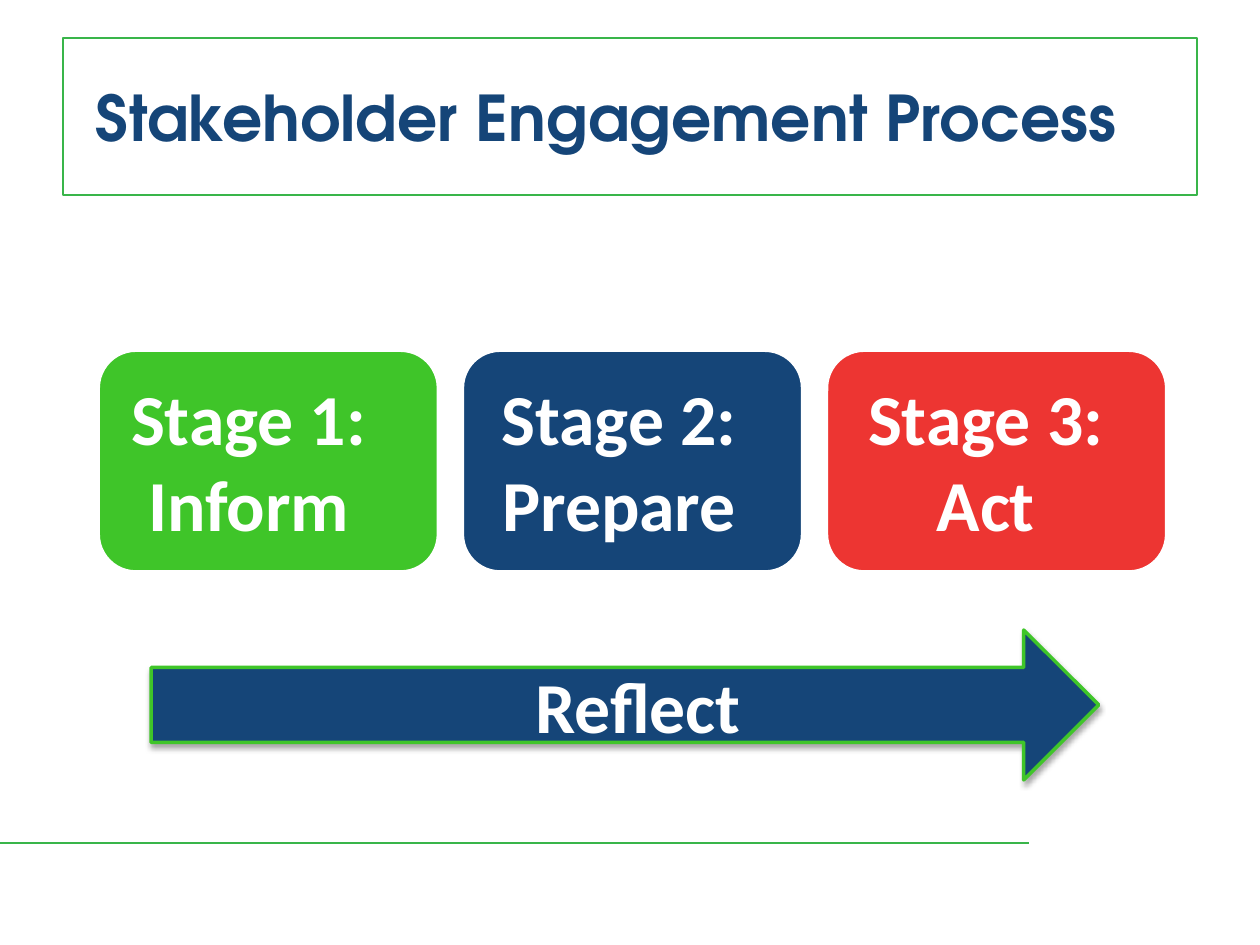
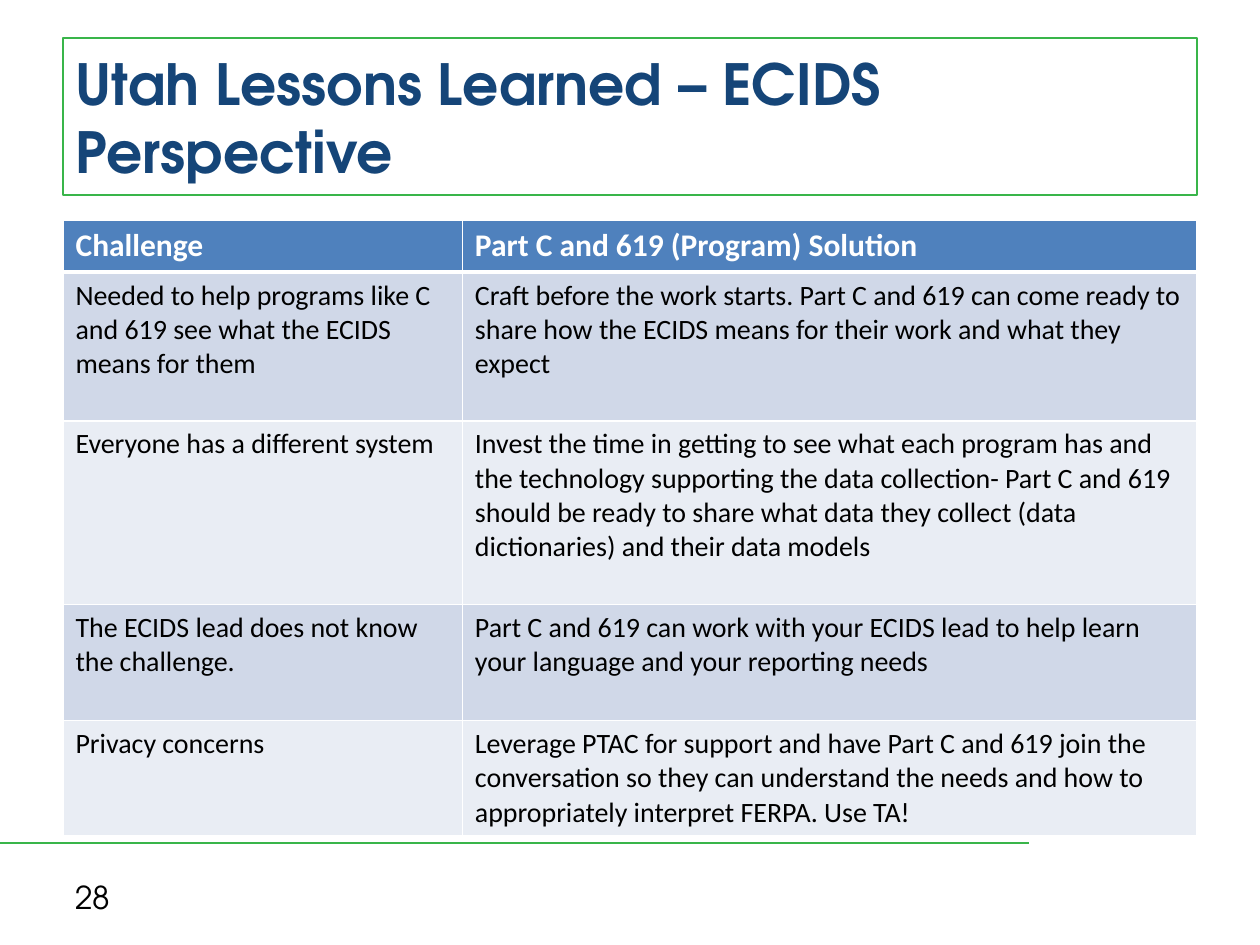
from pptx import Presentation
from pptx.dml.color import RGBColor
from pptx.enum.shapes import MSO_CONNECTOR, MSO_SHAPE
from pptx.enum.text import MSO_ANCHOR, MSO_AUTO_SIZE, PP_ALIGN
from pptx.oxml import parse_xml
from pptx.oxml.ns import nsdecls
from pptx.util import Inches, Pt

BLUE = RGBColor(0x15, 0x45, 0x78)
GREEN = RGBColor(0x3F, 0xC5, 0x29)
RED = RGBColor(0xED, 0x35, 0x32)
RULE = RGBColor(0x39, 0xB5, 0x4A)
HEAD = RGBColor(0x4F, 0x81, 0xBD)
BANDS = RGBColor(0xD0, 0xD8, 0xE8), RGBColor(0xE9, 0xED, 0xF4)
WHITE = RGBColor(0xFF, 0xFF, 0xFF)
BLACK = RGBColor(0, 0, 0)
BODY = "Calibri"
DISPLAY = "TeX Gyre Adventor"

STAGES = [
    ("Stage 1:", "Inform", GREEN, 0.99),
    ("Stage 2:", "Prepare", BLUE, 3.93),
    ("Stage 3:", "Act", RED, 6.84),
]
LESSONS = [
    ("Challenge", "Part C and 619 (Program) Solution"),
    ("Needed to help programs like C and 619 see what the ECIDS means for them",
     "Craft before the work starts. Part C and 619 can come ready to share how "
     "the ECIDS means for their work and what they expect"),
    ("Everyone has a different system",
     "Invest the time in getting to see what each program has and the technology "
     "supporting the data collection- Part C and 619 should be ready to share "
     "what data they collect (data dictionaries) and their data models"),
    ("The ECIDS lead does not know the challenge.",
     "Part C and 619 can work with your ECIDS lead to help learn your language "
     "and your reporting needs"),
    ("Privacy concerns",
     "Leverage PTAC for support and have Part C and 619 join the conversation so "
     "they can understand the needs and how to appropriately interpret FERPA. "
     "Use TA!"),
]


class Deck:
    def __init__(self):
        self.prs = Presentation()
        self.prs.slide_width, self.prs.slide_height = Inches(10), Inches(7.5)
        self.slide = None

    def start(self, title, size, inset=0.1, indent=0):
        """Begin a slide with the framed title and the bottom rule."""
        self.slide = self.prs.slides.add_slide(self.prs.slide_layouts[5])
        rule = self.slide.shapes.add_connector(
            MSO_CONNECTOR.STRAIGHT, 0, Inches(6.69), Inches(8.17), Inches(6.69))
        rule.line.color.rgb, rule.line.width = RULE, Pt(1.5)
        self.effect(rule)
        head = self.slide.shapes.title
        self.place(head, 0.5, 0.3, 9, 1.25)
        head.line.color.rgb, head.line.width = RULE, Pt(1)
        frame = self.letter(head, [title], size, BLUE, DISPLAY, inset=inset)
        frame.auto_size = MSO_AUTO_SIZE.NONE
        frame.paragraphs[0].alignment = PP_ALIGN.LEFT
        self.indent(frame.paragraphs[0], indent)

    def place(self, shape, left, top, width, height):
        shape.left, shape.top = Inches(left), Inches(top)
        shape.width, shape.height = Inches(width), Inches(height)

    def effect(self, shape, inner=""):
        """Replace the theme's shadow with the given effects."""
        shape._element.spPr.append(parse_xml(
            f"<a:effectLst {nsdecls('a')}>{inner}</a:effectLst>"))

    def indent(self, para, width):
        props = para._p.get_or_add_pPr()
        props.set("marL", "0")
        props.set("indent", str(Inches(width)))

    def font(self, para, size, color, name, bold):
        para.font.size, para.font.name = Pt(size), name
        para.font.bold, para.font.color.rgb = bold, color

    def letter(self, shape, lines, size, color, name=BODY, bold=True,
               inset=0.1, anchor=MSO_ANCHOR.MIDDLE):
        """Fill a shape with styled lines and return its text frame."""
        frame = shape.text_frame
        frame.text = "\n".join(lines)
        frame.word_wrap = True
        frame.vertical_anchor = anchor
        frame.margin_left = frame.margin_right = Inches(inset)
        frame.margin_top = frame.margin_bottom = Inches(min(inset, 0.05))
        for para in frame.paragraphs:
            self.font(para, size, color, name, bold)
        return frame

    def text(self, box, lines, size, color, **style):
        shape = self.slide.shapes.add_textbox(*map(Inches, box))
        return self.letter(shape, lines, size, color, **style)

    def shape(self, kind, box, fill, line):
        shape = self.slide.shapes.add_shape(kind, *map(Inches, box))
        shape.fill.solid()
        shape.fill.fore_color.rgb = fill
        shape.line.color.rgb, shape.line.width = line, Pt(2)
        return shape

    def stage(self, left, name, verb, fill, label):
        card = self.shape(MSO_SHAPE.ROUNDED_RECTANGLE, (left, 2.78, 2.7, 1.76), fill, WHITE)
        card.adjustments[0] = 0.17
        card.shadow.inherit = False
        frame = self.text((label, 2.92, 2.43, 1.41), [name, verb], 41, WHITE,
                          inset=0.05, anchor=MSO_ANCHOR.TOP)
        frame.word_wrap = False
        frame.auto_size = MSO_AUTO_SIZE.SHAPE_TO_FIT_TEXT
        frame.paragraphs[1].alignment = PP_ALIGN.CENTER

    def arrow(self, label):
        arrow = self.shape(MSO_SHAPE.RIGHT_ARROW, (1.2, 5, 7.52, 1.19), BLUE, GREEN)
        self.effect(arrow, f'<a:outerShdw blurRad="{Pt(3)}" dist="{Pt(1.8)}" dir="5400000" '
                           'rotWithShape="0"><a:srgbClr val="000000">'
                           '<a:alpha val="35000"/></a:srgbClr></a:outerShdw>')
        frame = self.text((1.2, 5.22, 7.23, 0.75), [label], 41, WHITE, inset=0)
        frame.paragraphs[0].alignment = PP_ALIGN.CENTER
        self.indent(frame.paragraphs[0], 0.5)

    def edge(self, cell, **widths):
        """Draw white cell borders; widths are points by side."""
        props = cell._tc.get_or_add_tcPr()
        for side, width in widths.items():
            props.append(parse_xml(
                f'<a:ln{side} {nsdecls("a")} w="{Pt(width)}"><a:solidFill>'
                f'<a:srgbClr val="{WHITE}"/></a:solidFill></a:ln{side}>'))

    def table(self, rows, box, widths, heights):
        table = self.slide.shapes.add_table(
            len(rows), len(widths), *map(Inches, box)).table
        for col, width in zip(table.columns, widths):
            col.width = Inches(width)
        for i, (row, height) in enumerate(zip(rows, heights)):
            table.rows[i].height = Inches(height)
            top = i == 0
            for j, words in enumerate(row):
                cell = table.cell(i, j)
                cell.text = words
                self.edge(cell, L=1, R=1, T=3 if i == 1 else 1, B=3 if top else 1)
                cell.fill.solid()
                cell.fill.fore_color.rgb = HEAD if top else BANDS[(i - 1) % 2]
                self.font(cell.text_frame.paragraphs[0], 18 if top else 16,
                          WHITE if top else BLACK, BODY, top)


def main():
    deck = Deck()

    deck.start("Stakeholder Engagement Process", 36, inset=0, indent=0.26)
    for i, (name, verb, fill, label) in enumerate(STAGES):
        deck.stage(0.78 + 2.89 * i, name, verb, fill, label)
    deck.arrow("Reflect")

    deck.start("Utah Lessons Learned – ECIDS Perspective", 32.4)
    deck.table(LESSONS, (0.5, 1.75, 9, 4.88), (3.17, 5.83),
               (0.41, 1.18, 1.46, 0.92, 0.91))
    deck.text((0.5, 6.92, 2.33, 0.4), ["28"], 18, BLACK, name=DISPLAY, bold=False)

    deck.prs.save("out.pptx")


if __name__ == "__main__":
    main()
